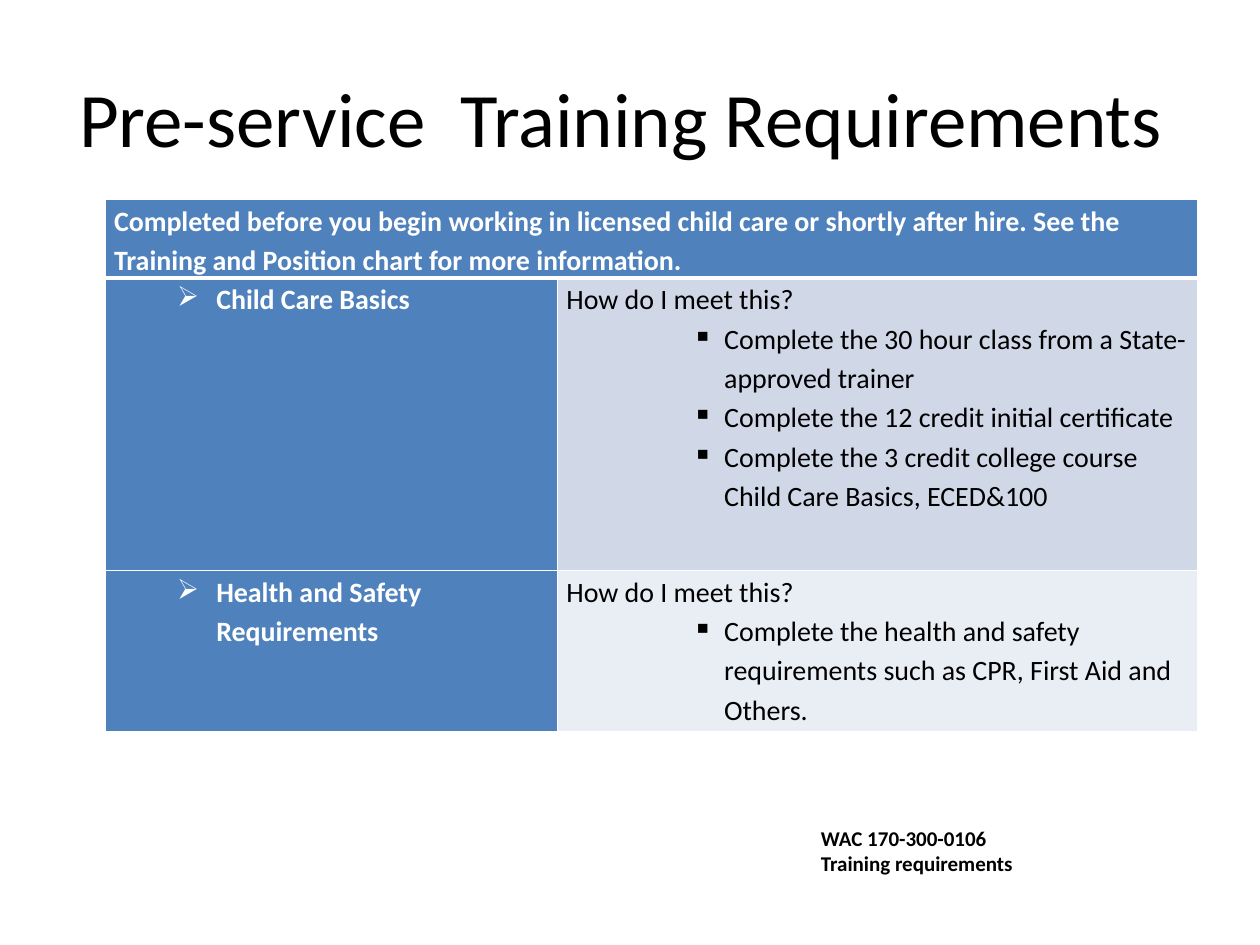
from lxml import etree
from pptx import Presentation
from pptx.dml.color import RGBColor
from pptx.enum.text import MSO_ANCHOR, PP_ALIGN
from pptx.oxml.ns import qn
from pptx.util import Cm, Pt

MIDDLE = MSO_ANCHOR.MIDDLE
CENTER = PP_ALIGN.CENTER
TITLE_ONLY = 5
FONT = "Calibri"
BLACK, WHITE, BLUE = "000000", "FFFFFF", "4F81BD"

# Paragraph formats: level, left margin and hanging indent in cm, bullet
PLAIN = None
TOPIC = {"level": 1, "margin": 2.06, "hanging": 0.79, "bullet": "➢"}
OPTION = {"level": 2, "margin": 3.18, "hanging": 0.64, "bullet": "▪"}

HEADING = ("Completed before you begin working in licensed child care or shortly "
           "after hire. See the Training and Position chart for more information.")
QUESTION = "How do I meet this?"
REQUIREMENTS = [
    ("Child Care Basics", "D0D8E8", [
        "Complete the 30 hour class from a State-approved trainer",
        "Complete the 12 credit initial certificate",
        "Complete the 3 credit college course Child Care Basics, ECED&100"]),
    ("Health and Safety Requirements", "E9EDF4", [
        "Complete the health and safety requirements such as CPR, First Aid and Others."]),
]


def color(hex_string):
    return RGBColor.from_string(hex_string)


def set_attributes(target, values):
    for name, value in values.items():
        setattr(target, name, value)


def write(paragraph, text, size, hex_string, bold=False):
    run = paragraph.add_run()
    run.text = text
    set_attributes(run.font, {"name": FONT, "size": Pt(size), "bold": bold})
    run.font.color.rgb = color(hex_string)


def next_paragraph(text_frame, index):
    return text_frame.add_paragraph() if index else text_frame.paragraphs[0]


def add_bullet(paragraph, style):
    paragraph.level = style["level"]
    properties = paragraph._p.get_or_add_pPr()
    properties.set("marL", str(Cm(style["margin"])))
    properties.set("indent", str(-Cm(style["hanging"])))
    etree.SubElement(properties, qn("a:buChar"), char=style["bullet"])


def add_borders(cell, bottom=1, top=1):
    properties = cell._tc.get_or_add_tcPr()
    for side, width in {"L": 1, "R": 1, "T": top, "B": bottom}.items():
        line = etree.SubElement(properties, qn(f"a:ln{side}"), w=str(Pt(width)))
        fill = etree.SubElement(line, qn("a:solidFill"))
        etree.SubElement(fill, qn("a:srgbClr"), val=WHITE)


def fill_cell(cell, fill, lines, hex_string, bold, **borders):
    """Write (text, style) lines into a bordered, filled cell."""
    add_borders(cell, **borders)
    cell.fill.solid()
    cell.fill.fore_color.rgb = color(fill)
    set_attributes(cell, {"margin_left": Cm(0.18), "margin_right": Cm(0.18),
                          "margin_top": 0, "margin_bottom": 0})
    for index, (text, style) in enumerate(lines):
        paragraph = next_paragraph(cell.text_frame, index)
        paragraph.line_spacing = 1.15
        if style:
            add_bullet(paragraph, style)
        write(paragraph, text, 16, hex_string, bold)


def place_title(slide, left, top, width, height):
    title = slide.shapes.title
    set_attributes(title, {"left": left, "top": top, "width": width, "height": height})
    title.text_frame.vertical_anchor = MIDDLE
    paragraph = title.text_frame.paragraphs[0]
    paragraph.alignment = CENTER
    write(paragraph, "Pre-service  Training Requirements ", 44, BLACK)


def add_requirements_table(slide, left, top, width, height):
    table = slide.shapes.add_table(
        len(REQUIREMENTS) + 1, 2, left, top, width, height).table
    table.columns[0].width = Cm(9.12)
    table.columns[1].width = width - Cm(9.12)
    for row, row_height in zip(table.rows, (1.57, 5.89, 3.26)):
        row.height = Cm(row_height)

    # Heading across both columns
    heading, covered = table.cell(0, 0), table.cell(0, 1)
    heading.merge(covered)
    fill_cell(heading, BLUE, [(HEADING, PLAIN)], WHITE, True, bottom=3)
    fill_cell(covered, BLUE, [], WHITE, True, bottom=3)

    # One row for each requirement
    for row, (topic, fill, options) in enumerate(REQUIREMENTS, start=1):
        top_border = 3 if row == 1 else 1
        answers = [(QUESTION, PLAIN)] + [(option, OPTION) for option in options]
        fill_cell(table.cell(row, 0), BLUE, [(topic, TOPIC)], WHITE, True, top=top_border)
        fill_cell(table.cell(row, 1), fill, answers, BLACK, False, top=top_border)


def add_reference(slide, left, top, width, height):
    text_frame = slide.shapes.add_textbox(left, top, width, height).text_frame
    text_frame.word_wrap = True
    for index, text in enumerate(("WAC 170-300-0106", "Training requirements")):
        write(next_paragraph(text_frame, index), text, 12, BLACK, True)


def main():
    presentation = Presentation()
    set_attributes(presentation, {"slide_width": Cm(25.4), "slide_height": Cm(19.05)})
    slide = presentation.slides.add_slide(presentation.slide_layouts[TITLE_ONLY])
    place_title(slide, Cm(1.27), Cm(0.76), Cm(22.86), Cm(3.18))
    add_requirements_table(slide, Cm(2.12), Cm(4.02), Cm(22.02), Cm(10.72))
    add_reference(slide, Cm(16.3), Cm(16.51), Cm(4.65), Cm(1.27))
    presentation.save("out.pptx")


if __name__ == "__main__":
    main()
